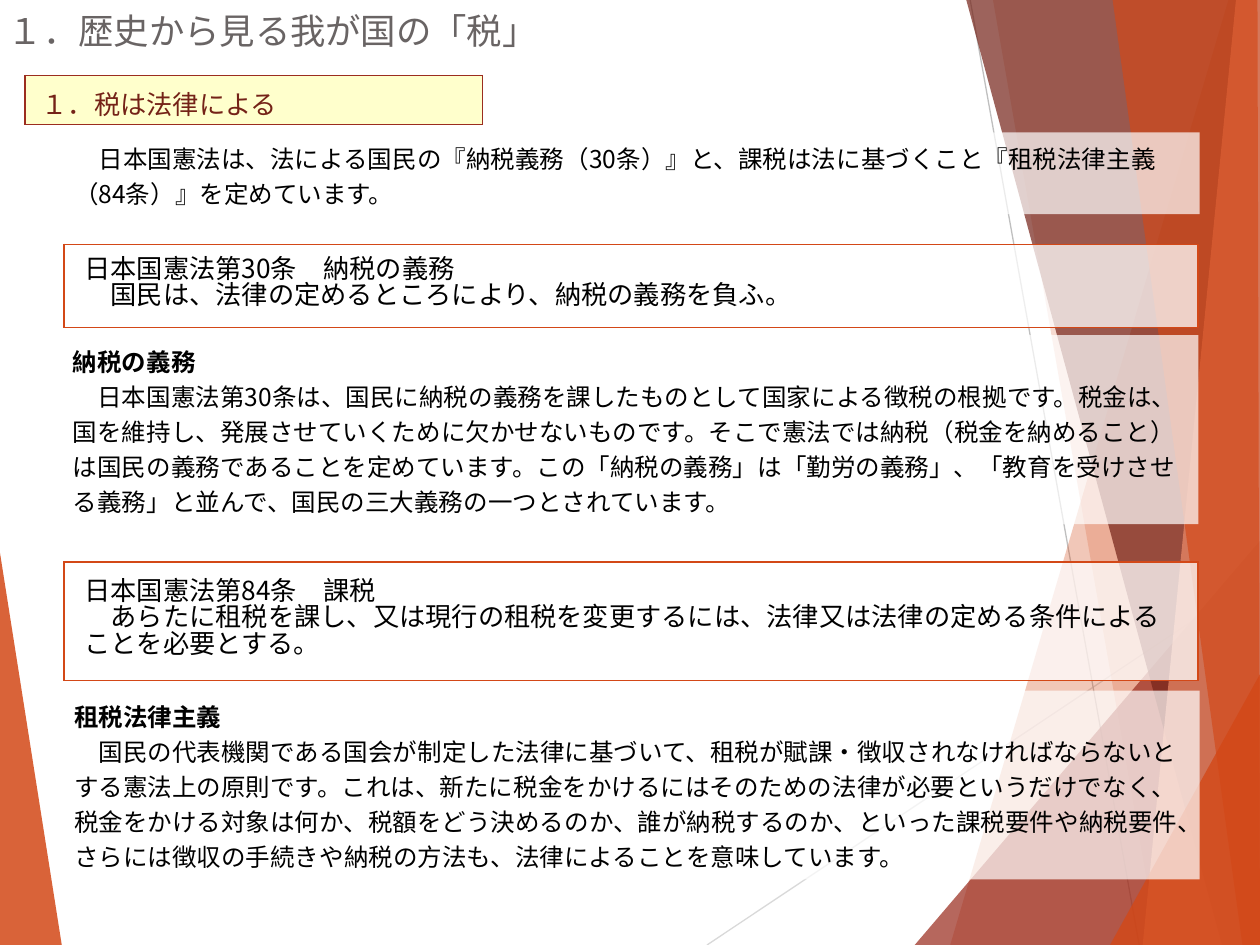
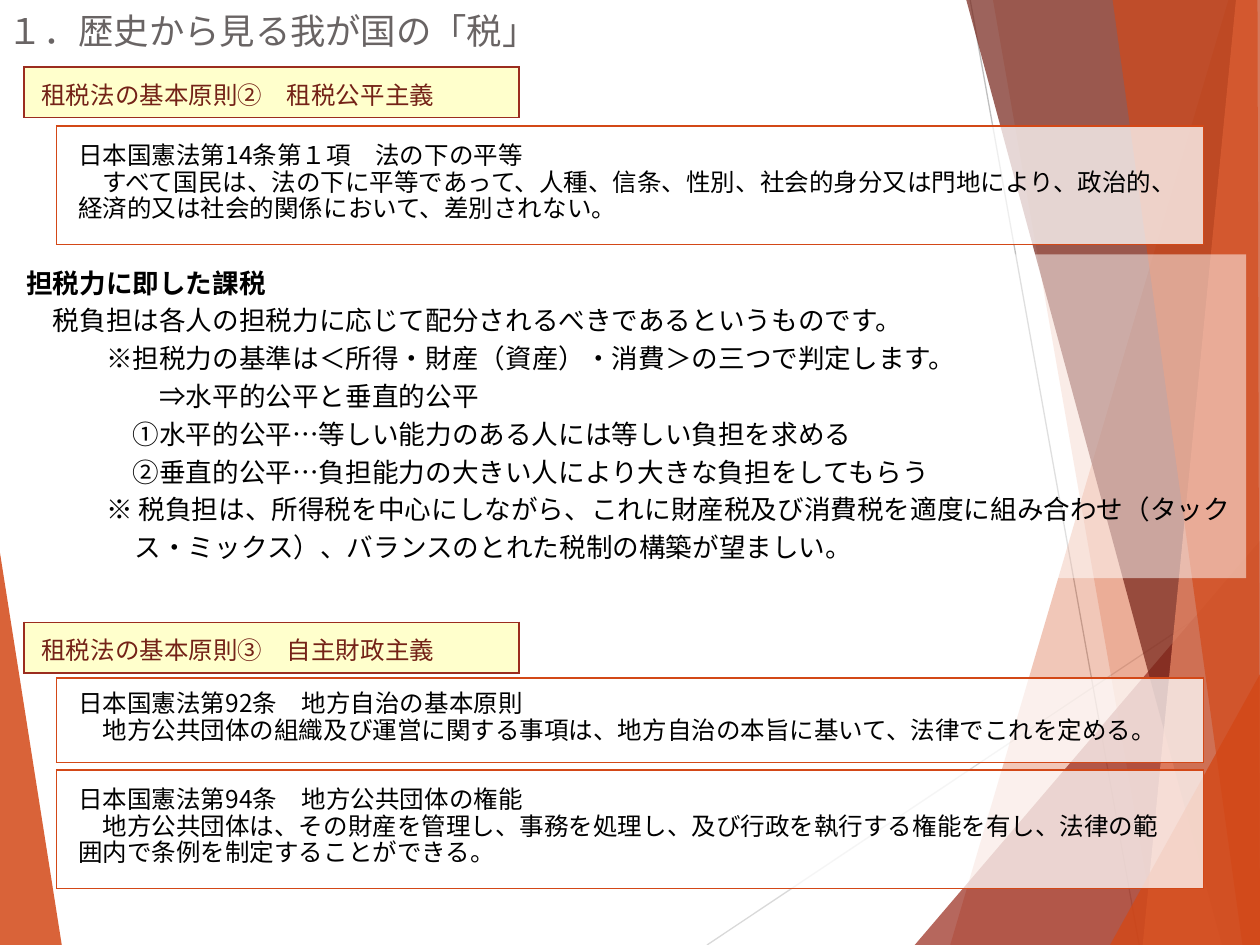
from lxml import etree
from pptx import Presentation
from pptx.dml.color import RGBColor
from pptx.enum.shapes import MSO_CONNECTOR, MSO_SHAPE
from pptx.enum.text import MSO_ANCHOR, PP_ALIGN
from pptx.oxml.ns import qn
from pptx.util import Pt

STRAIGHT = MSO_CONNECTOR.STRAIGHT
RECTANGLE = MSO_SHAPE.RECTANGLE
TOP, MIDDLE = MSO_ANCHOR.TOP, MSO_ANCHOR.MIDDLE
LEFT = PP_ALIGN.LEFT

WIDTH, HEIGHT = 720, 540
FONT = "Noto Sans CJK JP"
COLORS = {
    "white": "FFFFFF", "black": "000000", "title": "696464", "cream": "FFFFCC",
    "orange": "D34817", "red": "9B2D1F", "maroon": "742217", "salmon": "EF8C6A",
    "light_gray": "D9D9D9", "gray": "BFBFBF",
}

TITLE = "１．歴史から見る我が国の「税」"
LEFT_WEDGE = ([(0, 316), (35.3, 540), (0, 540)], "orange", 85)
RAYS = [((404, 540), (720, 329), "light_gray"), ((554.4, 0), (651, 540), "gray")]
RIGHT_FACETS = [
    ([(702, 0), (543, 540), (720, 540), (720, 0)], "orange", 30),
    ([(567.4, 0), (661.7, 540), (720, 540), (720, 0)], "orange", 20),
    ([(522.7, 540), (720, 309), (720, 540)], "red", 72),
    ([(552.2, 0), (698.4, 540), (720, 540), (720, 0)], "maroon", 70),
    ([(706.3, 0), (653, 540), (720, 540), (720, 0)], "salmon", 70),
    ([(635.8, 0), (710, 540), (720, 540), (718.6, 0)], "orange", 65),
    ([(634.3, 540), (720, 385.2), (720, 540)], "orange", 80),
]

BOX_STYLES = {
    "tag": {"fill": "cream", "opacity": 100, "border": "red", "color": "maroon", "anchor": TOP},
    "law": {"fill": "white", "opacity": 75, "border": "orange", "color": "black",
            "anchor": MIDDLE, "spacing": 15},
}

EM = 15.2
SLIDES = [
    {
        "box_size": 15,
        "margins": {"tag": (9.4, 5), "law": (11.5, 3.6)},
        "panel": {"size": 14, "spacing": 20, "opacity": 70},
        "parts": [
            ("tag", (14.4, 43.2, 261.4, 27.4), ["１．税は法律による"]),
            ("panel", (35.3, 75.6, 650.2, 46.8), [
                "　日本国憲法は、法による国民の『納税義務（30条）』と、課税は法に基づくこと『租税法律主義（84条）』を定めています。",
            ]),
            ("law", (36.7, 139.7, 648, 47.5), [
                "日本国憲法第30条　納税の義務",
                "　国民は、法律の定めるところにより、納税の義務を負ふ。",
            ]),
            ("panel", (34.6, 191.5, 650.2, 108), [
                "納税の義務",
                "　日本国憲法第30条は、国民に納税の義務を課したものとして国家による徴税の根拠です。税金は、国を維持し、発展させていくために欠かせないものです。そこで憲法では納税（税金を納めること）は国民の義務であることを定めています。この「納税の義務」は「勤労の義務」、「教育を受けさせる義務」と並んで、国民の三大義務の一つとされています。",
            ]),
            ("law", (36.7, 321.1, 648, 67.7), [
                "日本国憲法第84条　課税",
                "　あらたに租税を課し、又は現行の租税を変更するには、法律又は法律の定める条件によることを必要とする。",
            ]),
            ("panel", (35.3, 394.6, 650.2, 108), [
                "租税法律主義",
                "　国民の代表機関である国会が制定した法律に基づいて、租税が賦課・徴収されなければならないとする憲法上の原則です。これは、新たに税金をかけるにはそのための法律が必要というだけでなく、税金をかける対象は何か、税額をどう決めるのか、誰が納税するのか、といった課税要件や納税要件、さらには徴収の手続きや納税の方法も、法律によることを意味しています。",
            ]),
        ],
    },
    {
        "box_size": 14,
        "margins": {"tag": (10, 5), "law": (12.2, 4.3)},
        "panel": {"size": EM, "spacing": 21.6, "opacity": 50},
        "parts": [
            ("tag", (13.7, 38.2, 283, 28.8), ["租税法の基本原則②　租税公平主義"]),
            ("law", (32.4, 72, 655.2, 67.7), [
                "日本国憲法第14条第１項　法の下の平等",
                "　すべて国民は、法の下に平等であって、人種、信条、性別、社会的身分又は門地により、政治的、経済的又は社会的関係において、差別されない。",
            ]),
            ("panel", (7.9, 145.4, 704.2, 185), [
                "担税力に即した課税",
                "　税負担は各人の担税力に応じて配分されるべきであるというものです。",
                ("※担税力の基準は＜所得・財産（資産）・消費＞の三つで判定します。", 3 * EM, 0),
                ("⇒水平的公平と垂直的公平", 5 * EM, 0),
                ("①水平的公平…等しい能力のある人には等しい負担を求める", 4 * EM, 0),
                ("②垂直的公平…負担能力の大きい人により大きな負担をしてもらう", 4 * EM, 0),
                ("※ 税負担は、所得税を中心にしながら、これに財産税及び消費税を適度に組み合わせ（タックス・ミックス）、バランスのとれた税制の構築が望ましい。", 62, 3 * EM - 62),
            ]),
            ("tag", (13.7, 355.7, 283, 28.8), ["租税法の基本原則③　自主財政主義"]),
            ("law", (32.4, 387.4, 655.2, 48.2), [
                "日本国憲法第92条　地方自治の基本原則",
                "　地方公共団体の組織及び運営に関する事項は、地方自治の本旨に基いて、法律でこれを定める。",
            ]),
            ("law", (32.4, 439.9, 655.2, 67.7), [
                "日本国憲法第94条　地方公共団体の権能",
                "　地方公共団体は、その財産を管理し、事務を処理し、及び行政を執行する権能を有し、法律の範囲内で条例を制定することができる。",
            ]),
        ],
    },
]


def rgb(name):
    return RGBColor.from_string(COLORS[name])


def points(values):
    return [Pt(value) for value in values]


def paint(fill, properties, color, opacity):
    fill.solid()
    fill.fore_color.rgb = rgb(color)
    if opacity < 100:
        color_element = properties.find(qn("a:solidFill")).find(qn("a:srgbClr"))
        etree.SubElement(color_element, qn("a:alpha"), val=str(opacity * 1000))


def paint_shape(shape, color, opacity):
    shape.shadow.inherit = False
    paint(shape.fill, shape._element.spPr, color, opacity)
    shape.line.fill.background()


def write(frame, texts, size=14, color="black", spacing=None, bold_heading=False):
    for index, item in enumerate(texts):
        text, margin, indent = item if isinstance(item, tuple) else (item, 0, 0)
        paragraph = frame.paragraphs[0] if index == 0 else frame.add_paragraph()
        paragraph.alignment = LEFT
        if spacing:
            paragraph.line_spacing = Pt(spacing)
        if margin:
            properties = paragraph._p.get_or_add_pPr()
            properties.set("marL", str(Pt(margin)))
            properties.set("indent", str(Pt(indent)))
        run = paragraph.add_run()
        run.text = text
        font = run.font
        font.name, font.size = FONT, Pt(size)
        font.bold = bold_heading and index == 0
        font.color.rgb = rgb(color)
        etree.SubElement(run._r.get_or_add_rPr(), qn("a:ea"), typeface=FONT)


def set_margins(target, horizontal, vertical):
    target.margin_left = target.margin_right = Pt(horizontal)
    target.margin_top = target.margin_bottom = Pt(vertical)


def add_facet(slide, vertices, color, opacity):
    start, *others = [points(vertex) for vertex in vertices]
    builder = slide.shapes.build_freeform(*start)
    builder.add_line_segments(others, close=True)
    paint_shape(builder.convert_to_shape(), color, opacity)


def add_ray(slide, start, end, color):
    ray = slide.shapes.add_connector(STRAIGHT, *points(start + end))
    ray.line.color.rgb = rgb(color)
    ray.line.width = Pt(0.75)
    etree.SubElement(ray._element.spPr, qn("a:effectLst"))


def add_backdrop(slide):
    add_facet(slide, *LEFT_WEDGE)
    for ray in RAYS:
        add_ray(slide, *ray)
    for facet in RIGHT_FACETS:
        add_facet(slide, *facet)


def add_title(slide):
    frame = slide.shapes.add_textbox(*points((0, 1.4, 394, 32.4))).text_frame
    frame.word_wrap = True
    frame.vertical_anchor = MIDDLE
    set_margins(frame, 0, 0)
    frame.margin_left = Pt(4.5)
    write(frame, [TITLE], size=20.2, color="title")


def add_panel(slide, place, texts, size, spacing, opacity):
    panel = slide.shapes.add_shape(RECTANGLE, *points(place))
    paint_shape(panel, "white", opacity)
    frame = panel.text_frame
    frame.word_wrap = True
    frame.vertical_anchor = TOP
    set_margins(frame, 7.2, 3.6)
    write(frame, texts, size=size, spacing=spacing, bold_heading=len(texts) > 1)


def add_borders(properties, color):
    for index, side in enumerate(("lnL", "lnR", "lnT", "lnB")):
        border = etree.Element(qn("a:" + side), w=str(Pt(1)))
        solid = etree.SubElement(border, qn("a:solidFill"))
        etree.SubElement(solid, qn("a:srgbClr"), val=COLORS[color])
        properties.insert(index, border)


def add_box(slide, place, texts, size, margins, style):
    table = slide.shapes.add_table(1, 1, *points(place)).table
    table.first_row = table.horz_banding = False
    cell = table.cell(0, 0)
    set_margins(cell, *margins)
    cell.vertical_anchor = style["anchor"]
    properties = cell._tc.get_or_add_tcPr()
    paint(cell.fill, properties, style["fill"], style["opacity"])
    add_borders(properties, style["border"])
    write(cell.text_frame, texts, size=size, color=style["color"], spacing=style.get("spacing"))


def main():
    presentation = Presentation()
    presentation.slide_width, presentation.slide_height = Pt(WIDTH), Pt(HEIGHT)
    for content in SLIDES:
        slide = presentation.slides.add_slide(presentation.slide_layouts[6])
        add_backdrop(slide)
        add_title(slide)
        for kind, place, texts in content["parts"]:
            if kind == "panel":
                add_panel(slide, place, texts, **content["panel"])
            else:
                add_box(slide, place, texts, content["box_size"],
                        content["margins"][kind], BOX_STYLES[kind])
    presentation.save("out.pptx")


if __name__ == "__main__":
    main()
